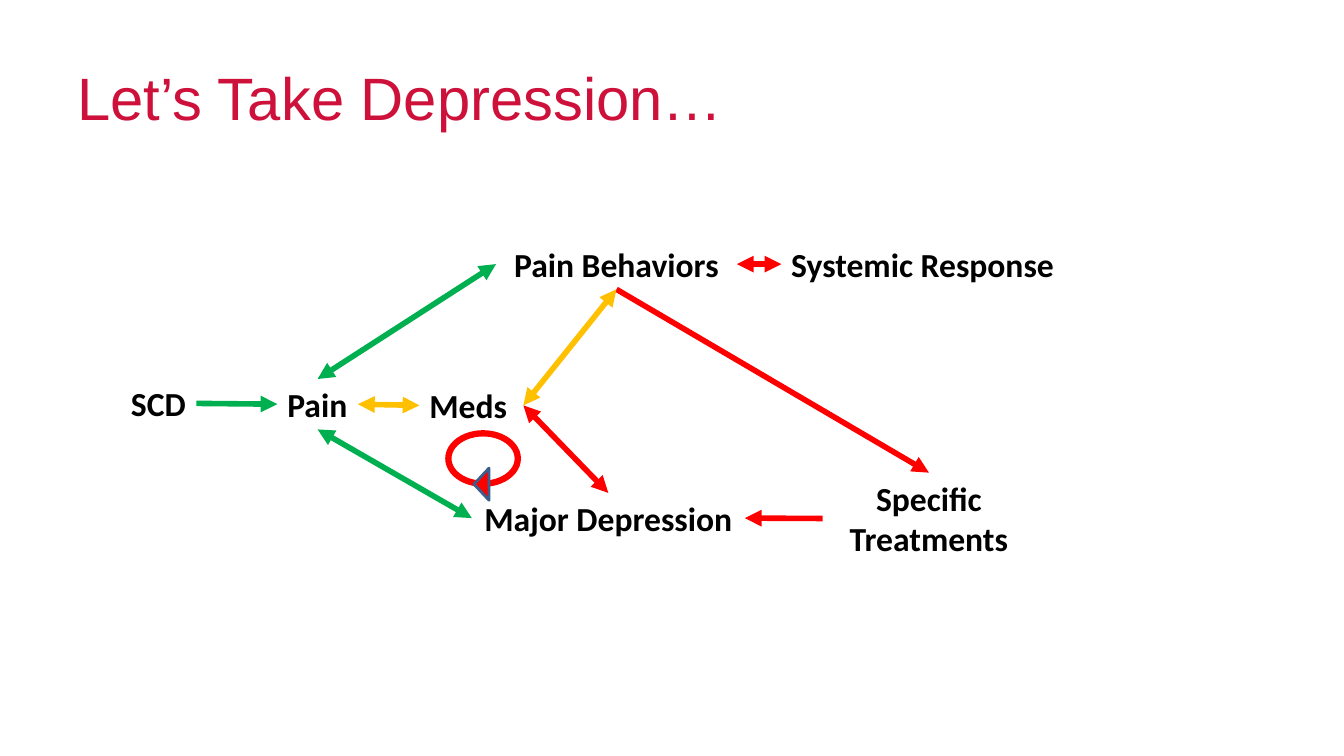
"""Draw the slide that links depression, pain and treatment."""
from dataclasses import dataclass

from lxml import etree
from pptx import Presentation
from pptx.dml.color import RGBColor
from pptx.enum import shapes, text
from pptx.oxml.ns import qn
from pptx.util import Cm, Pt

TOP, LEFT, BASE, RIGHT = range(4)


@dataclass(frozen=True)
class Theme:
    """Colours, fonts and sizes of the slide."""
    title: str = "CD113B"
    ink: str = "000000"
    red: str = "FF0000"
    green: str = "00B050"
    gold: str = "FFC000"
    blue: str = "3A5F8C"
    head: str = "Arial"
    body: str = "Calibri"
    big: float = 42.7
    size: float = 24
    line: float = 4
    ring: float = 4.5
    edge: float = 2


@dataclass(frozen=True)
class Node:
    """A label with its place in centimetres."""
    words: str
    x: float
    y: float
    w: float
    h: float = 1.27
    mid: bool = False
    wrap: bool = False


@dataclass(frozen=True)
class Link:
    """An arrow from a side of one node to a side of another."""
    start: str
    out: int
    end: str
    into: int
    hue: str
    both: bool = True


T = Theme()

NODES = {
    "mood": Node("Major Depression", 11.89, 12.42, 6.88, mid=True),
    "scd": Node("SCD", 3.05, 9.53, 1.9),
    "pain": Node("Pain", 6.99, 9.55, 2.03),
    "body": Node("Systemic Response", 19.69, 6.02, 7.21),
    "acts": Node("Pain Behaviors", 12.5, 6.02, 6.07, mid=True, wrap=True),
    "care": Node("Specific\nTreatments", 20.73, 11.91, 5.36, 2.31, True, True),
    "meds": Node("Meds", 10.57, 9.58, 2.62, wrap=True),
}

LINKS = [
    Link("scd", RIGHT, "pain", LEFT, T.green, False),
    Link("body", LEFT, "acts", RIGHT, T.red),
    Link("pain", BASE, "mood", LEFT, T.green),
    Link("pain", TOP, "acts", LEFT, T.green),
    Link("acts", BASE, "care", TOP, T.red, False),
    Link("care", LEFT, "mood", RIGHT, T.red, False),
    Link("acts", BASE, "meds", RIGHT, T.gold),
    Link("meds", RIGHT, "mood", TOP, T.red),
    Link("pain", RIGHT, "meds", LEFT, T.gold),
]


def rgb(hue: str) -> RGBColor:
    """Turn a hex string into a colour."""
    return RGBColor.from_string(hue)


def write(slide, words: str, x: float, y: float, w: float, h: float, *,
          font: str = T.body, size: float = T.size, hue: str = T.ink,
          bold: bool = False, mid: bool = False, wrap: bool = True,
          low: bool = False):
    """Add a text box, one paragraph for each line of the words."""
    box = slide.shapes.add_textbox(Cm(x), Cm(y), Cm(w), Cm(h))
    frame = box.text_frame
    frame.text = words
    frame.word_wrap = wrap
    if low:
        frame.vertical_anchor = text.MSO_ANCHOR.BOTTOM
        frame.margin_bottom = 0
    for para in frame.paragraphs:
        para.alignment = text.PP_ALIGN.CENTER if mid else text.PP_ALIGN.LEFT
        for run in para.runs:
            run.font.name = font
            run.font.size = Pt(size)
            run.font.bold = bold
            run.font.color.rgb = rgb(hue)
    return box


def join(slide, link: Link, boxes: dict) -> None:
    """Draw an arrow glued to the sides of two nodes."""
    wire = slide.shapes.add_connector(shapes.MSO_CONNECTOR.STRAIGHT, 0, 0, 0, 0)
    wire.begin_connect(boxes[link.start], link.out)
    wire.end_connect(boxes[link.end], link.into)
    wire.line.color.rgb = rgb(link.hue)
    wire.line.width = Pt(T.line)
    stroke = wire.line._get_or_add_ln()
    for tag in ["headEnd", "tailEnd"] if link.both else ["tailEnd"]:
        etree.SubElement(stroke, qn(f"a:{tag}"), type="triangle")
    etree.SubElement(wire._element.spPr, qn("a:effectLst"))


def form(slide, kind: shapes.MSO_SHAPE, x: float, y: float, w: float, h: float,
         hue: str, width: float, fill: str = "", turn: float = 0) -> None:
    """Add an outlined preset shape, hollow unless a fill is given."""
    shape = slide.shapes.add_shape(kind, Cm(x), Cm(y), Cm(w), Cm(h))
    shape.shadow.inherit = False
    shape.rotation = turn
    shape.line.color.rgb = rgb(hue)
    shape.line.width = Pt(width)
    if fill:
        shape.fill.solid()
        shape.fill.fore_color.rgb = rgb(fill)
    else:
        shape.fill.background()


def main() -> None:
    """Build and save the slide."""
    deck = Presentation()
    deck.slide_width, deck.slide_height = Cm(33.87), Cm(19.05)
    slide = deck.slides.add_slide(deck.slide_layouts[6])
    write(slide, "Let’s Take Depression…", 1.7, 1.37, 30.48, 1.98,
          font=T.head, size=T.big, hue=T.title, low=True)
    boxes = {
        key: write(slide, node.words, node.x, node.y, node.w, node.h,
                   bold=True, mid=node.mid, wrap=node.wrap)
        for key, node in NODES.items()
    }
    for link in LINKS:
        join(slide, link, boxes)
    form(slide, shapes.MSO_SHAPE.OVAL, 11.3, 10.92, 1.75, 1.27, T.red, T.ring)
    form(slide, shapes.MSO_SHAPE.ISOSCELES_TRIANGLE, 11.73, 12.01, 0.81, 0.38,
         T.blue, T.edge, fill=T.red, turn=270)
    deck.save("out.pptx")


if __name__ == "__main__":
    main()
